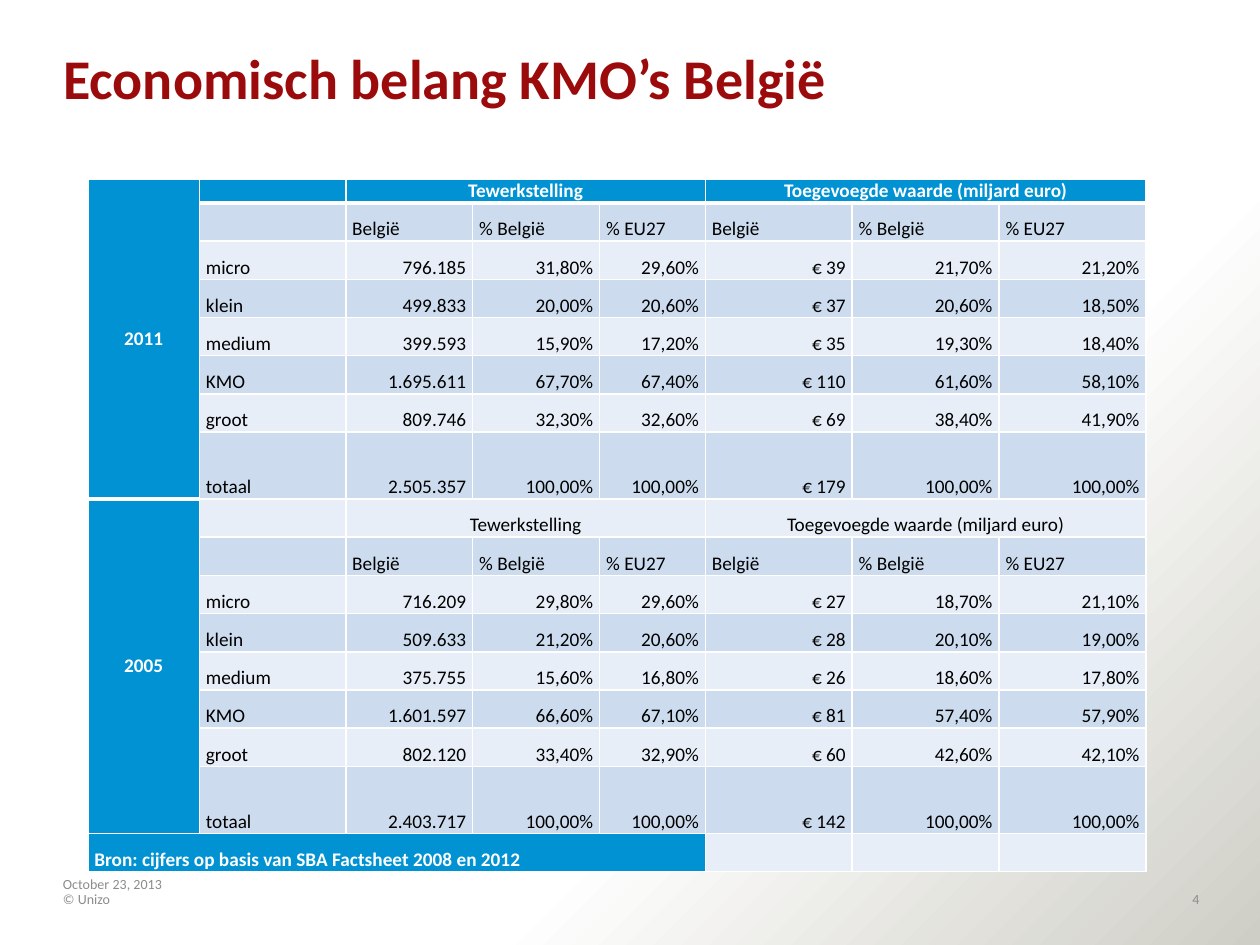
from lxml.etree import SubElement as Sub
from pptx import Presentation
from pptx.dml.color import RGBColor
from pptx.enum.text import MSO_ANCHOR as Anchor, MSO_AUTO_SIZE as Auto, PP_ALIGN as Align
from pptx.oxml import parse_xml
from pptx.oxml.ns import nsdecls, qn
from pptx.util import Cm, Pt

FONT = "Calibri"
RED, BLUE, WHITE, BLACK, GREY = "9B0B0B", "0092D2", "FFFFFF", "000000", "8C8C8C"
BANDS = ("E7EEF7", "CCDCEE")

COLS = (2.25, 2.95, 2.56, 2.56, 2.13, 2.96, 2.96, 2.96)
HEAD, ROW, TOTAL = 0.3, 0.77, 1.35
GROUPS = {2: "Tewerkstelling", 5: "Toegevoegde waarde (miljard euro)"}
UNITS = ("België", "% België", "% EU27")
SIZES = ("micro", "klein", "medium", "KMO", "groot", "totaal")
YEARS = {
    "2011": (
        "796.185;31,80%;29,60%;€ 39;21,70%;21,20%",
        "499.833;20,00%;20,60%;€ 37;20,60%;18,50%",
        "399.593;15,90%;17,20%;€ 35;19,30%;18,40%",
        "1.695.611;67,70%;67,40%;€ 110;61,60%;58,10%",
        "809.746;32,30%;32,60%;€ 69;38,40%;41,90%",
        "2.505.357;100,00%;100,00%;€ 179;100,00%;100,00%",
    ),
    "2005": (
        "716.209;29,80%;29,60%;€ 27;18,70%;21,10%",
        "509.633;21,20%;20,60%;€ 28;20,10%;19,00%",
        "375.755;15,60%;16,80%;€ 26;18,60%;17,80%",
        "1.601.597;66,60%;67,10%;€ 81;57,40%;57,90%",
        "802.120;33,40%;32,90%;€ 60;42,60%;42,10%",
        "2.403.717;100,00%;100,00%;€ 142;100,00%;100,00%",
    ),
}
BLOCK = len(SIZES) + 2
LAST = BLOCK * len(YEARS)
SOURCE = "Bron: cijfers op basis van SBA Factsheet 2008 en 2012"


def color(code):
    return RGBColor.from_string(code)


def write(frame, text, size, code, bold=False, align=Align.LEFT):
    para = frame.paragraphs[0]
    para.alignment = align
    run = para.add_run()
    run.text = text
    font = run.font
    font.name, font.size, font.bold = FONT, Pt(size), bold
    font.color.rgb = color(code)
    return para


def strip(frame, anchor):
    """Fix the frame's size and remove its insets."""
    frame.margin_left = frame.margin_right = 0
    frame.margin_top = frame.margin_bottom = 0
    frame.word_wrap, frame.auto_size = True, Auto.NONE
    frame.vertical_anchor = anchor


def paint(slide):
    """Give the slide a white to grey gradient that starts at the top left."""
    slide.background.fill.solid()
    props = slide.background._cSld.bg.bgPr
    grad = parse_xml(
        f'<a:gradFill {nsdecls("a")} rotWithShape="1"><a:gsLst>'
        '<a:gs pos="65000"><a:srgbClr val="FFFFFF"/></a:gs>'
        '<a:gs pos="100000"><a:srgbClr val="CFCEC6"/></a:gs></a:gsLst>'
        '<a:path path="circle"><a:fillToRect r="100000" b="100000"/></a:path>'
        '</a:gradFill>')
    props.replace(props[0], grad)


def add_title(slide, text):
    title = slide.shapes.title
    title.left, title.top = Cm(1.27), Cm(1.14)
    title.width, title.height = Cm(17.22), Cm(2.77)
    strip(title.text_frame, Anchor.TOP)
    para = write(title.text_frame, text, 32, RED, True)
    para.line_spacing = 0.8


def add_note(slide, text, left, top, width, align=Align.LEFT):
    box = slide.shapes.add_textbox(Cm(left), Cm(top), Cm(width), Cm(0.23))
    strip(box.text_frame, Anchor.BOTTOM)
    write(box.text_frame, text, 8, GREY, align=align)


def edge(cell, base):
    """Draw white borders, with the bottom one base points wide."""
    props = cell._tc.get_or_add_tcPr()
    for side, width in (("L", 1), ("R", 1), ("T", 1), ("B", base)):
        line = Sub(props, qn(f"a:ln{side}"), w=str(Pt(width)))
        Sub(Sub(line, qn("a:solidFill")), qn("a:srgbClr"), val=WHITE)


def style(cell, row, col):
    edge(cell, 1 if row else 3)
    blue = row == 0 or col == 0 or (row == LAST and col < 5)
    cell.fill.solid()
    cell.fill.fore_color.rgb = color(BLUE if blue else BANDS[row % 2])
    cell.margin_left = cell.margin_right = Cm(0.13)
    cell.margin_top = cell.margin_bottom = 0
    cell.vertical_anchor = Anchor.BOTTOM
    Sub(cell.text_frame.paragraphs[0]._p, qn("a:endParaRPr"), sz="1100")


def put(cell, text, align=Align.LEFT, strong=False):
    write(cell.text_frame, text, 11, WHITE if strong else BLACK, strong, align)


def fill_year(table, top, year, lines):
    name = table.cell(top, 0)
    name.merge(table.cell(top + BLOCK - 1, 0))
    name.vertical_anchor = Anchor.MIDDLE
    put(name, year, Align.CENTER, True)
    for col, group in GROUPS.items():
        head = table.cell(top, col)
        head.merge(table.cell(top, col + 2))
        put(head, group, Align.CENTER, top == 0)
        for step, unit in enumerate(UNITS):
            put(table.cell(top + 1, col + step), unit)
    for row, (size, line) in enumerate(zip(SIZES, lines), top + 2):
        put(table.cell(row, 1), size)
        for col, value in enumerate(line.split(";"), 2):
            put(table.cell(row, col), value, Align.RIGHT)


def add_grid(slide):
    rows = [ROW] * (LAST + 1)
    rows[0] = HEAD
    rows[BLOCK - 1:LAST:BLOCK] = [TOTAL] * len(YEARS)
    table = slide.shapes.add_table(len(rows), len(COLS), Cm(1.77), Cm(3.61),
                                   Cm(sum(COLS)), Cm(sum(rows))).table
    table.first_row = table.horz_banding = False
    for col, width in enumerate(COLS):
        table.columns[col].width = Cm(width)
    for row, height in enumerate(rows):
        table.rows[row].height = Cm(height)
        for col in range(len(COLS)):
            style(table.cell(row, col), row, col)
    for step, (year, lines) in enumerate(YEARS.items()):
        fill_year(table, step * BLOCK, year, lines)
    foot = table.cell(LAST, 0)
    foot.merge(table.cell(LAST, 4))
    put(foot, SOURCE, strong=True)


def main():
    deck = Presentation()
    deck.slide_width, deck.slide_height = Cm(25.4), Cm(19.05)
    slide = deck.slides.add_slide(deck.slide_layouts[5])
    paint(slide)
    add_title(slide, "Economisch belang KMO’s België")
    add_grid(slide)
    add_note(slide, "October 23, 2013", 1.27, 17.75, 5.92)
    add_note(slide, "© Unizo", 1.27, 18.06, 15.44)
    add_note(slide, "4", 23.11, 18.06, 1.07, Align.RIGHT)
    deck.save("out.pptx")


if __name__ == "__main__":
    main()
